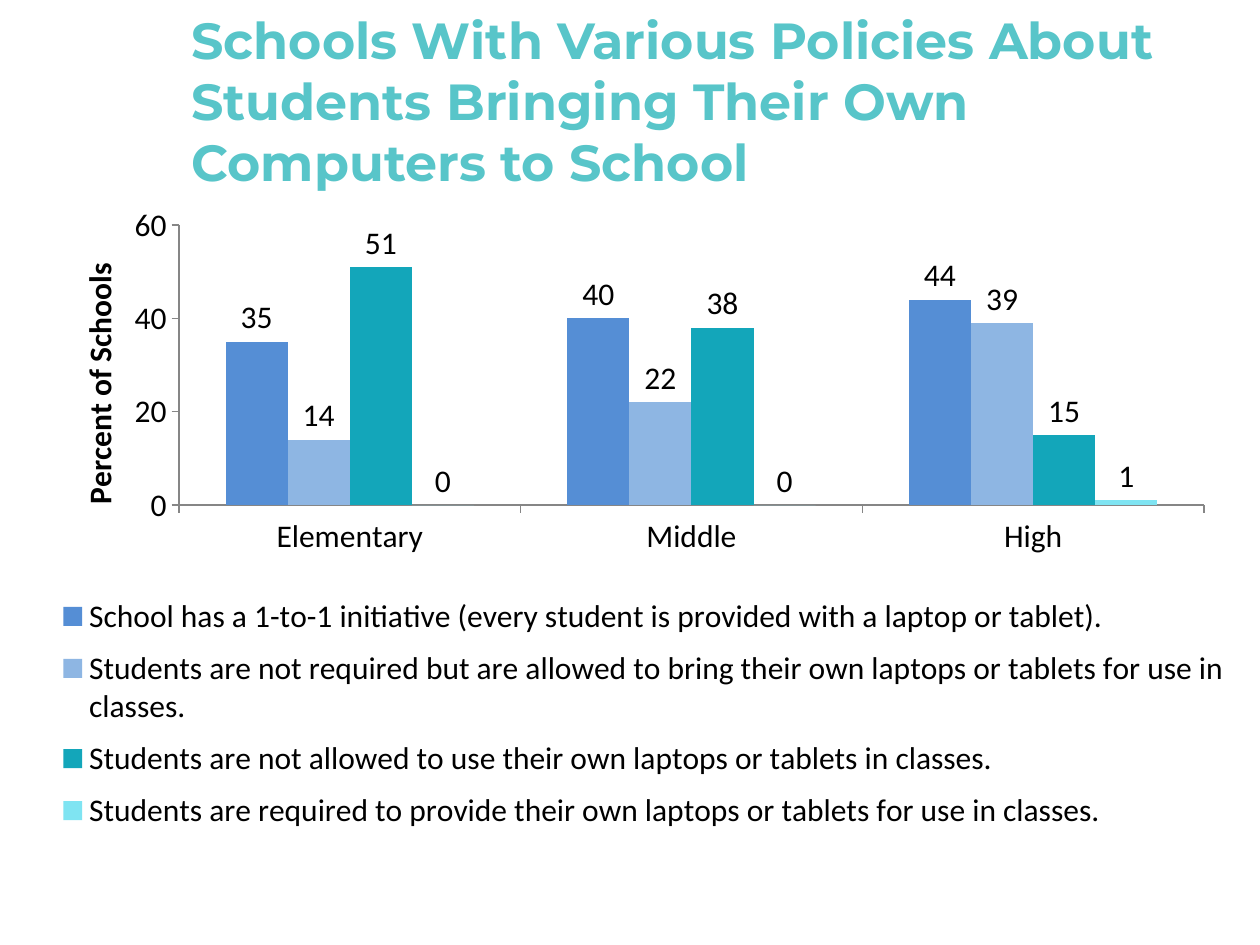
from lxml.etree import SubElement
from pptx import Presentation
from pptx.chart.data import CategoryChartData
from pptx.dml.color import RGBColor
from pptx.enum.chart import XL_CHART_TYPE as ChartType
from pptx.enum.chart import XL_LABEL_POSITION as LabelPosition
from pptx.enum.chart import XL_LEGEND_POSITION as LegendPosition
from pptx.enum.chart import XL_TICK_MARK as TickMark
from pptx.enum.text import MSO_ANCHOR as Anchor
from pptx.oxml.ns import qn
from pptx.util import Inches, Pt

BLACK = RGBColor(0x00, 0x00, 0x00)
AXIS_GRAY = RGBColor(0x86, 0x86, 0x86)
TITLE_TEAL = RGBColor(0x58, 0xC5, 0xC9)
BLUE = RGBColor(0x55, 0x8E, 0xD5)
LIGHT_BLUE = RGBColor(0x8E, 0xB6, 0xE3)
TEAL = RGBColor(0x13, 0xA6, 0xBA)
AQUA = RGBColor(0x7F, 0xE4, 0xF2)

LEVELS = ("Elementary", "Middle", "High")
POLICIES = (
    ("School has a 1-to-1 initiative (every student is provided with a laptop or tablet).",
     (35, 40, 44), BLUE),
    ("Students are not required but are allowed to bring their own laptops or tablets for use in classes.",
     (14, 22, 39), LIGHT_BLUE),
    ("Students are not allowed to use their own laptops or tablets in classes.",
     (51, 38, 15), TEAL),
    ("Students are required to provide their own laptops or tablets for use in classes.",
     (0, 0, 1), AQUA),
)


def set_layout(parent, index, inner=False, **shares):
    """Place a chart part by shares of the chart's size."""
    for old_layout in parent.findall(qn("c:layout")):
        parent.remove(old_layout)
    layout = SubElement(parent, qn("c:layout"))
    parent.insert(index, layout)
    manual = SubElement(layout, qn("c:manualLayout"))
    if inner:
        SubElement(manual, qn("c:layoutTarget")).set("val", "inner")
    for mode in ("xMode", "yMode"):
        SubElement(manual, qn(f"c:{mode}")).set("val", "edge")
    for name, share in shares.items():
        SubElement(manual, qn(f"c:{name}")).set("val", str(share))


def style_axes(chart):
    """Set the scale, ticks, lines and title of both axes."""
    for axis in (chart.category_axis, chart.value_axis):
        axis.has_major_gridlines = False
        axis.major_tick_mark = TickMark.OUTSIDE
        axis.minor_tick_mark = TickMark.NONE
        axis.format.line.color.rgb = AXIS_GRAY
        axis.format.line.width = Pt(0.75)
    value_axis = chart.value_axis
    value_axis.minimum_scale, value_axis.maximum_scale = 0, 60
    value_axis.major_unit = 20
    run = value_axis.axis_title.text_frame.paragraphs[0].add_run()
    run.text = "Percent of Schools"
    run.font.name, run.font.size, run.font.bold = "Calibri", Pt(18), True
    run.font.color.rgb = BLACK
    set_layout(value_axis.axis_title._element, 1, x=0.02, y=0.09)


def add_policy_chart(slide, left, top, width, height):
    """Draw the clustered columns with their legend."""
    data = CategoryChartData(number_format="0")
    data.categories = LEVELS
    for name, values, _ in POLICIES:
        data.add_series(name, values)
    chart = slide.shapes.add_chart(
        ChartType.COLUMN_CLUSTERED, left, top, width, height, data).chart
    chart.has_title = False
    chart.font.name, chart.font.size = "Calibri", Pt(18)
    chart.font.color.rgb = BLACK
    style_axes(chart)

    plot = chart.plots[0]
    plot.gap_width, plot.overlap = 150, 0
    plot.vary_by_categories = False
    plot.has_data_labels = True
    plot.data_labels.show_value = True
    plot.data_labels.position = LabelPosition.OUTSIDE_END
    for series, (_, _, color) in zip(plot.series, POLICIES):
        series.format.fill.solid()
        series.format.fill.fore_color.rgb = color

    chart.has_legend = True
    chart.legend.position = LegendPosition.BOTTOM
    chart.legend.include_in_layout = False
    set_layout(chart.legend._element, 1, x=0.0, y=0.59, w=1.0, h=0.4)
    plot_area = chart._chartSpace.chart.plotArea
    set_layout(plot_area, 0, inner=True, x=0.11, y=0.04, w=0.86, h=0.43)


def add_title(slide, left, top, width, height):
    """Write the slide's heading, centred on its height."""
    frame = slide.shapes.add_textbox(left, top, width, height).text_frame
    frame.word_wrap = True
    frame.vertical_anchor = Anchor.MIDDLE
    run = frame.paragraphs[0].add_run()
    run.text = "Schools With Various Policies About Students Bringing Their Own Computers to School"
    run.font.name, run.font.size, run.font.bold = "Montserrat", Pt(29), True
    run.font.color.rgb = TITLE_TEAL


def main():
    """Build and save the slide."""
    presentation = Presentation()
    presentation.slide_width, presentation.slide_height = Inches(10), Inches(7.5)
    slide = presentation.slides.add_slide(presentation.slide_layouts[6])
    add_policy_chart(slide, Inches(0.38), Inches(1.58), Inches(9.46), Inches(5.17))
    add_title(slide, Inches(1.42), Inches(0.17), Inches(8.08), Inches(1.25))
    presentation.save("out.pptx")


if __name__ == "__main__":
    main()
